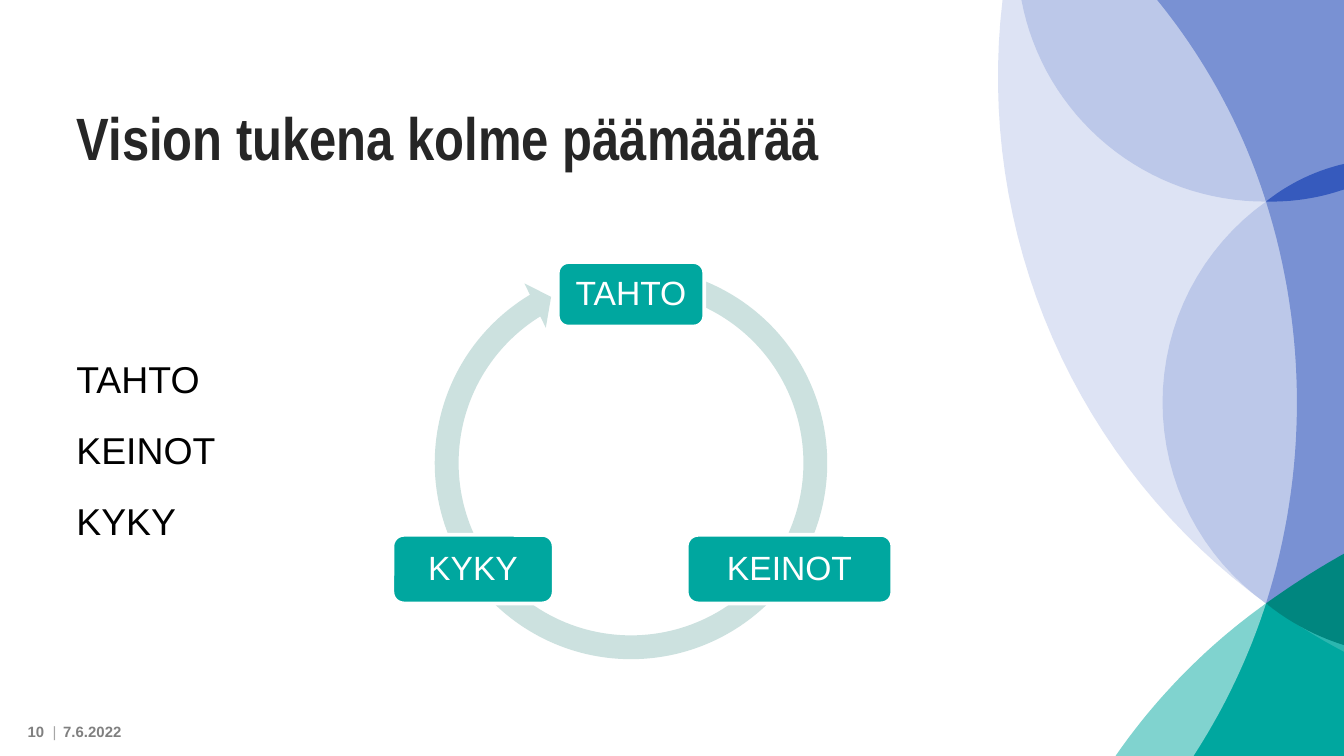
import math
import pptx
import pptx.util
import pptx.dml.color
import pptx.enum.shapes
import pptx.enum.text

HUES = {
    "teal": "00A79F", "mint": "80D3CF", "pine": "00867F", "sea": "2BB6AF",
    "pale": "DDE3F4", "sky": "BCC8E9", "blue": "7991D3", "navy": "365ABD",
    "ring": "CCE1DF", "white": "FFFFFF", "black": "000000",
    "ink": "262626", "gray": "808080", "light": "A6A6A6",
}
WIDE = 10
HIGH = WIDE * 9 / 16
TOP, LOW = (9.42, 1.5), (9.42, 4.49)
# A stop is a corner (x, y) or an arc (through x, through y, end x, end y).
PETALS = [
    ("teal", [LOW, (9, 4.95, 8.58, HIGH), (WIDE, HIGH), (WIDE, 4.77), (9.73, 4.66, *LOW)]),
    ("pale", [(7.46, 0), (7.8, 2.44, *LOW), TOP, (8.57, 0)]),
    ("sky", [(7.6, 0), (8.33, 1.15, *TOP), (8.65, 3, *LOW), (9.79, 4.13), (9.78, 0)]),
    ("blue", [(8.61, 0), (9.08, 0.7, *TOP), (9.65, 3, *LOW), (WIDE, 4.22), (WIDE, 0)]),
    ("navy", [TOP, (9.69, 1.33, WIDE, 1.22), (WIDE, 1.41), (9.72, 1.48, *TOP)]),
    ("sea", [(9.45, 4.51), (9.72, 4.67, WIDE, 4.77), (WIDE, 4.85), (9.72, 4.69, 9.45, 4.51)]),
    ("mint", [(8.3, HIGH), (8.88, HIGH), (9.19, 5.07, *LOW), (8.8, 5.02, 8.3, HIGH)]),
    ("pine", [LOW, (9.7, 4.3, WIDE, 4.12), (WIDE, 4.8), (9.71, 4.68, *LOW)]),
]
TITLE = "Vision tukena kolme päämäärää"
GOALS = ["TAHTO", "KEINOT", "KYKY"]
SPOTS = [(4.15, 1.95, 1.09, 0.48), (5.11, 3.98, 1.53, 0.51), (2.92, 3.98, 1.2, 0.51)]
RING = (3.14, 1.89, 3.11, 3.11)
BENDS = [0.057, 3.4, 143.19, 170.58, 0.059]
ALIGN = pptx.enum.text.PP_ALIGN
ANCHOR = pptx.enum.text.MSO_ANCHOR
KINDS = pptx.enum.shapes.MSO_SHAPE


def cm(*sizes):
    """Turn inches into centimetre lengths."""
    return [pptx.util.Cm(size * 2.54) for size in sizes]


def rgb(hue):
    """Give the named colour."""
    return pptx.dml.color.RGBColor.from_string(HUES[hue])


def apply(item, **style):
    """Set attributes from format values."""
    for key, value in style.items():
        setattr(item, key, value)


def arc(start, stop, steps=32):
    """List points on the circle arc from start through stop."""
    a, b, c = complex(*start), complex(*stop[:2]), complex(*stop[2:])
    w = (c - a) / (b - a)
    hub = a - (a - b) * (w - abs(w) ** 2) / (2j * w.imag)
    turn = (c - hub) / (a - hub)
    sweep = math.atan2(turn.imag, turn.real)
    angles = [sweep * n / steps for n in range(1, steps + 1)]
    spots = [hub + (a - hub) * complex(math.cos(t), math.sin(t)) for t in angles]
    return [(spot.real, spot.imag) for spot in spots]


def paint(shape, hue):
    """Fill a shape without line or shadow."""
    shape.shadow.inherit = False
    shape.fill.solid()
    shape.fill.fore_color.rgb = rgb(hue)
    shape.line.fill.background()


def petal(shapes, hue, stops):
    """Draw one petal of the side ornament."""
    dots = [stops[0]]
    for stop in stops[1:]:
        dots += arc(dots[-1], stop) if len(stop) == 4 else [stop]
    dots = [cm(*dot) for dot in dots]
    pen = shapes.build_freeform(*dots[0])
    pen.add_line_segments(dots[1:], close=True)
    paint(pen.convert_to_shape(), hue)


def write(shape, lines, size, hue, bold=False, name="Arial", pad=(0.1, 0.05, 0.1, 0.05),
          anchor=ANCHOR.MIDDLE, **style):
    """Write lines of text, each line a list of runs."""
    frame = shape.text_frame
    sides = ("left", "top", "right", "bottom")
    apply(frame, word_wrap=True, vertical_anchor=anchor,
          **{"margin_" + side: gap for side, gap in zip(sides, cm(*pad))})
    for n, line in enumerate(lines):
        para = frame.add_paragraph() if n else frame.paragraphs[0]
        apply(para, **style)
        for text in line:
            run = para.add_run()
            run.text = text
            apply(run.font, name=name, size=pptx.util.Pt(size), bold=bold)
            run.font.color.rgb = rgb(hue)


def main():
    """Build the slide."""
    deck = pptx.Presentation()
    deck.slide_width = pptx.util.Cm(25.4)
    deck.slide_height = deck.slide_width * 9 // 16
    slide = deck.slides.add_slide(deck.slide_layouts[5])
    shapes = slide.shapes
    for hue, stops in PETALS:
        petal(shapes, hue, stops)

    title = shapes.title
    apply(title, **dict(zip(("left", "top", "width", "height"), cm(0.47, 0.26, 7.2, 1.07))))
    write(title, [[TITLE]], 32, "ink", True, "Arial Narrow",
          anchor=ANCHOR.BOTTOM, alignment=ALIGN.LEFT)
    body = shapes.add_textbox(*cm(0.47, 2.6, 7.2, 2.65))
    write(body, [[goal] for goal in GOALS], 20, "black", anchor=ANCHOR.TOP,
          space_before=pptx.util.Pt(14))
    date = shapes.add_textbox(*cm(0.47, 5.33, 0.75, 0.22))
    write(date, [["7.6.2022"]], 8, "gray", True, pad=(0, 0, 0, 0))
    page = shapes.add_textbox(*cm(0, 5.33, 0.44, 0.22))
    write(page, [["10  ", "|"]], 8, "gray", True, pad=(0.1, 0.05, 0.02, 0.05),
          alignment=ALIGN.RIGHT)
    bar = page.text_frame.paragraphs[0].runs[1].font
    bar.bold = False
    bar.color.rgb = rgb("light")

    ring = shapes.add_shape(KINDS.CIRCULAR_ARROW, *cm(*RING))
    for n, bend in enumerate(BENDS):
        ring.adjustments[n] = bend
    paint(ring, "ring")
    for goal, spot in zip(GOALS, SPOTS):
        box = shapes.add_shape(KINDS.ROUNDED_RECTANGLE, *cm(*spot))
        paint(box, "teal")
        box.line.color.rgb = rgb("white")
        box.line.width = pptx.util.Pt(2)
        write(box, [[goal]], 18, "white", pad=[0.07] * 4,
              alignment=ALIGN.CENTER, line_spacing=0.9)
    deck.save("out.pptx")


if __name__ == "__main__":
    main()
